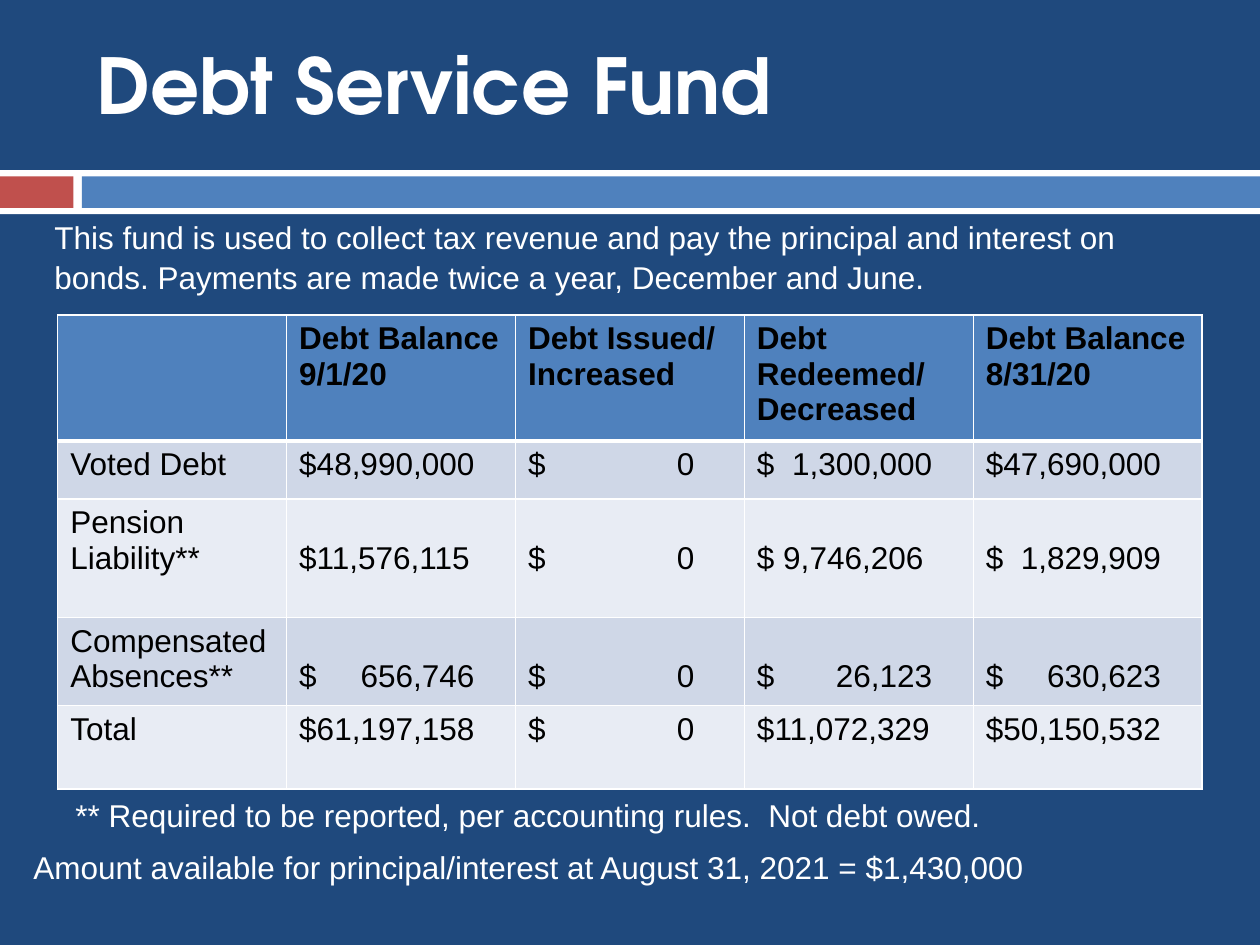
from dataclasses import dataclass

from pptx import Presentation
from pptx.dml.color import RGBColor
from pptx.enum.shapes import MSO_SHAPE
from pptx.enum.text import MSO_ANCHOR, MSO_AUTO_SIZE, PP_ALIGN
from pptx.oxml import parse_xml
from pptx.oxml.ns import nsdecls
from pptx.util import Inches, Pt

RECT = MSO_SHAPE.RECTANGLE
LEFT = PP_ALIGN.LEFT
MIDDLE = MSO_ANCHOR.MIDDLE
FIXED = MSO_AUTO_SIZE.NONE


@dataclass(frozen=True)
class Theme:
    navy: str = "1F497D"
    blue: str = "4F81BD"
    red: str = "C0504D"
    white: str = "FFFFFF"
    black: str = "000000"
    bands: tuple = ("CFD7E7", "E8ECF4")
    head: str = "TeX Gyre Adventor"
    body: str = "Arial"
    big: int = 44
    small: int = 18


HEADS = ["", "Debt Balance 9/1/20", "Debt Issued/\nIncreased",
         "Debt Redeemed/\nDecreased", "Debt Balance 8/31/20"]
# A tab sends the amount to the right-hand stop of its column.
ROWS = [
    ["Voted Debt", "$48,990,000", "$\t0", "$\t1,300,000", "$47,690,000"],
    ["Pension Liability**", "$11,576,115", "$\t0", "$ 9,746,206", "$\t1,829,909"],
    ["Compensated Absences**", "$\t656,746", "$\t0", "$\t26,123", "$\t630,623"],
    ["Total", "$61,197,158", "$\t0", "$11,072,329", "$50,150,532"],
]
HIGHS = [0.96, 0.46, 0.94, 0.68, 0.66]
LOW = (2, 3)  # rows whose amounts sit on the second line
STOPS = [1.39, 1.39, 1.32, 1.39, 1.39]


def apply(item, **values):
    for name, value in values.items():
        setattr(item, name, value)


class Deck:
    """Draws on a grid of 120 columns by 90 rows."""

    def __init__(self, theme):
        self.theme = theme
        self.file = Presentation()
        apply(self.file, slide_width=Inches(10), slide_height=Inches(7.5))
        self.slide = self.file.slides.add_slide(self.file.slide_layouts[5])
        self.paint(self.slide.background.fill, theme.navy)

    def grid(self, left, top, wide, high):
        col, row = self.file.slide_width / 120, self.file.slide_height / 90
        return [round(n) for n in (left * col, top * row, wide * col, high * row)]

    def paint(self, fill, color):
        fill.solid()
        fill.fore_color.rgb = RGBColor.from_string(color)

    def label(self, frame, text, color, **font):
        frame.text = text
        style = {"name": self.theme.body, "size": Pt(self.theme.small),
                 "bold": False, **font}
        for para in frame.paragraphs:
            para.alignment = LEFT
            for run in para.runs:
                apply(run.font, **style)
                run.font.color.rgb = RGBColor.from_string(color)

    def title(self, text, *place):
        shape = self.slide.shapes.title
        apply(shape, **dict(zip(("left", "top", "width", "height"),
                                self.grid(*place))))
        apply(shape.text_frame, vertical_anchor=MIDDLE, auto_size=FIXED)
        self.label(shape.text_frame, text, self.theme.white, bold=True,
                   name=self.theme.head, size=Pt(self.theme.big))

    def bar(self, color, *place):
        shape = self.slide.shapes.add_shape(RECT, *self.grid(*place))
        shape.shadow.inherit = False
        self.paint(shape.fill, color)
        shape.line.fill.background()

    def note(self, text, *place):
        frame = self.slide.shapes.add_textbox(*self.grid(*place)).text_frame
        frame.word_wrap = True
        self.label(frame, text, self.theme.white)
        frame.paragraphs[0].line_spacing = 1.05

    def edge(self, cell, base):
        """Rule all four sides; base is the width of the lower one."""
        for side, width in zip("LRTB", (1, 1, 1, base)):
            cell._tc.get_or_add_tcPr().append(parse_xml(
                f'<a:ln{side} {nsdecls("a")} w="{Pt(width)}"><a:solidFill>'
                f'<a:srgbClr val="{self.theme.white}"/></a:solidFill></a:ln{side}>'))

    def stop(self, para, inch):
        """Add a right-aligned tab stop."""
        para._p.get_or_add_pPr().append(parse_xml(
            f'<a:tabLst {nsdecls("a")}><a:tab pos="{Inches(inch)}" algn="r"/>'
            '</a:tabLst>'))

    def table(self, rows, highs, *place):
        grid = self.slide.shapes.add_table(
            len(rows), len(rows[0]), *self.grid(*place)).table
        grid.horz_banding = False
        for r, (texts, high) in enumerate(zip(rows, highs)):
            grid.rows[r].height = Inches(high)
            for c, text in enumerate(texts):
                cell = grid.cell(r, c)
                self.edge(cell, 1 if r else 3)
                self.paint(cell.fill, self.theme.bands[(r - 1) % 2] if r
                           else self.theme.blue)
                self.label(cell.text_frame, text, self.theme.black, bold=r == 0)
                if "\t" in text:
                    self.stop(cell.text_frame.paragraphs[0], STOPS[c])
                if r in LOW and c:
                    cell.margin_top = Inches(0.33)


def main():
    theme = Theme()
    deck = Deck(theme)
    deck.bar(theme.white, 0, 16.2, 120, 4.2)
    deck.bar(theme.red, 0, 16.8, 7, 3)
    deck.bar(theme.blue, 7.8, 16.8, 112.2, 3)
    deck.title("Debt Service Fund", 8, 0, 104, 16)
    deck.note("This fund is used to collect tax revenue and pay the principal "
              "and interest on bonds. Payments are made twice a year, "
              "December and June.", 4, 20, 112, 8.5)
    deck.note("Amount available for principal/interest at August 31, 2021 "
              "= $1,430,000", 2, 80, 112, 4.8)
    deck.table([HEADS] + ROWS, HIGHS, 5.5, 30, 109, 44.4)
    deck.note("** Required to be reported, per accounting rules.  "
              "Not debt owed.", 6, 75, 108, 4.8)
    deck.file.save("out.pptx")


if __name__ == "__main__":
    main()
